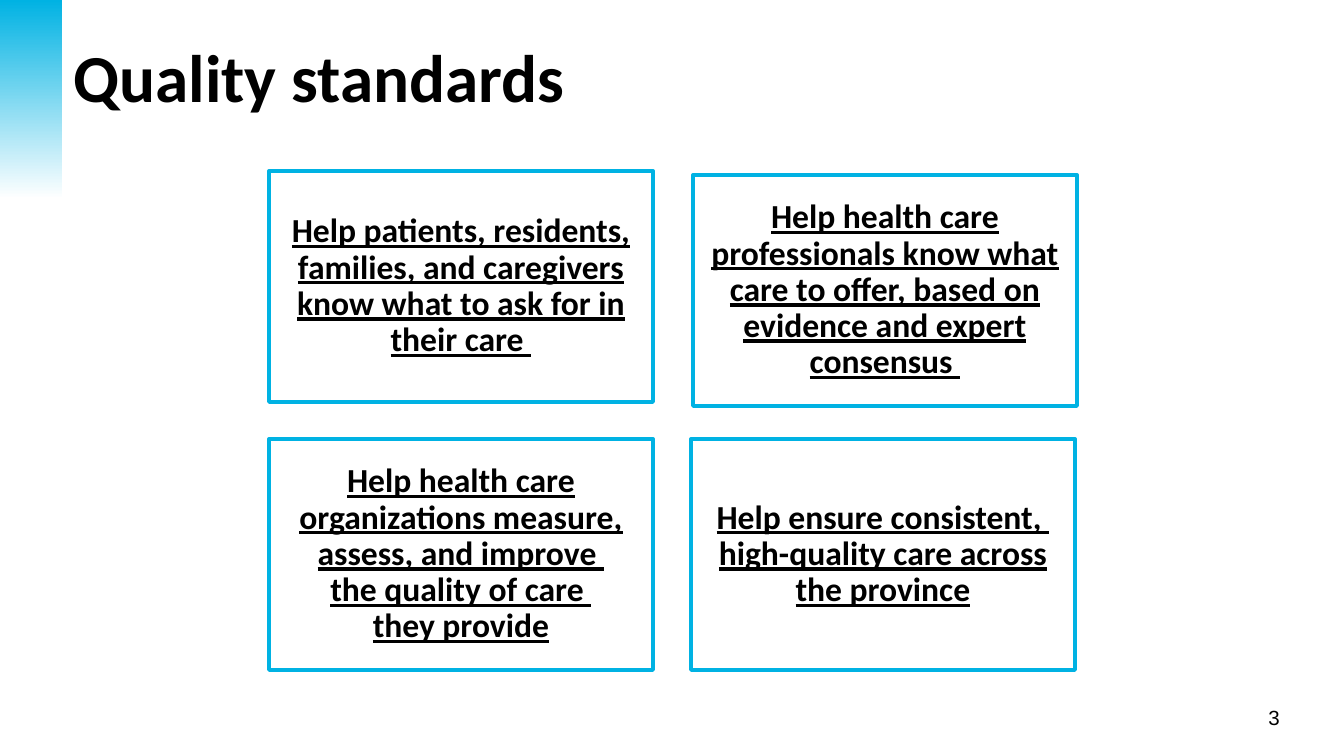
import dataclasses

import pptx
import pptx.dml.color
import pptx.enum.shapes
import pptx.enum.text
import pptx.util

RGB = pptx.dml.color.RGBColor
ALIGN = pptx.enum.text.PP_ALIGN
RECT = pptx.enum.shapes.MSO_SHAPE.RECTANGLE
MIDDLE = pptx.enum.text.MSO_ANCHOR.MIDDLE

BLUE = RGB(0x00, 0xB2, 0xE3)
WHITE = RGB(0xFF, 0xFF, 0xFF)
BLACK = RGB(0x00, 0x00, 0x00)
SCALE = 914400 / 134.4
WIDE, HIGH = 384, 231
INSET = 9


@dataclasses.dataclass
class Card:
    left: int
    top: int
    lines: list[str]


CARDS = [
    Card(269, 171, ["Help patients, residents, families, and caregivers know what to ask for in their care "]),
    Card(693, 175, ["Help health care professionals know what care to offer, based on evidence and expert consensus "]),
    Card(269, 439, ["Help health care organizations measure, assess, and improve ",
                    "the quality of care ", "they provide"]),
    Card(691, 439, ["Help ensure consistent, ", "high-quality care across the province"]),
]


def px(size: int) -> pptx.util.Emu:
    return pptx.util.Emu(round(size * SCALE))


def box(left: int, top: int, wide: int, high: int) -> tuple:
    return px(left), px(top), px(wide), px(high)


def write(para, text: str, size: int, face: str = "Calibri",
          bold: bool = True, under: bool = False) -> None:
    run = para.add_run()
    run.text = text
    font = run.font
    font.name = face
    font.size = pptx.util.Pt(size)
    font.bold = bold
    font.underline = under
    font.color.rgb = BLACK


def add_band(slide) -> None:
    band = slide.shapes.add_shape(RECT, *box(0, 0, 62, 199))
    band.shadow.inherit = False
    band.line.fill.background()
    band.fill.gradient()
    band.fill.gradient_angle = 270
    for stop, color in zip(band.fill.gradient_stops, (BLUE, WHITE)):
        stop.color.rgb = color


def add_title(slide) -> None:
    title = slide.shapes.title
    title.left, title.top, title.width, title.height = box(60, 23, 945, 106)
    frame = title.text_frame
    frame.auto_size = pptx.enum.text.MSO_AUTO_SIZE.NONE
    frame.vertical_anchor = MIDDLE
    para = frame.paragraphs[0]
    para.alignment = ALIGN.LEFT
    write(para, "Quality standards", 36)


def add_card(slide, card: Card) -> None:
    shape = slide.shapes.add_shape(RECT, *box(card.left, card.top, WIDE, HIGH))
    shape.shadow.inherit = False
    shape.fill.background()
    shape.line.color.rgb = BLUE
    shape.line.width = pptx.util.Pt(2)
    frame = shape.text_frame
    frame.word_wrap = True
    frame.vertical_anchor = MIDDLE
    frame.margin_left = frame.margin_right = px(INSET)
    frame.margin_top = frame.margin_bottom = px(INSET)
    para = frame.paragraphs[0]
    para.alignment = ALIGN.CENTER
    para.line_spacing = 0.9
    for index, line in enumerate(card.lines):
        if index:
            para.add_line_break()
        write(para, line, 18, under=True)


def add_page(slide) -> None:
    frame = slide.shapes.add_textbox(*box(1136, 698, 157, 39)).text_frame
    frame.word_wrap = True
    frame.vertical_anchor = MIDDLE
    para = frame.paragraphs[0]
    para.alignment = ALIGN.RIGHT
    write(para, "3", 11, "Arial", False)


def main() -> None:
    deck = pptx.Presentation()
    deck.slide_width, deck.slide_height = px(1344), px(756)
    slide = deck.slides.add_slide(deck.slide_layouts[5])
    add_band(slide)
    add_title(slide)
    for card in CARDS:
        add_card(slide, card)
    add_page(slide)
    deck.save("out.pptx")


if __name__ == "__main__":
    main()
